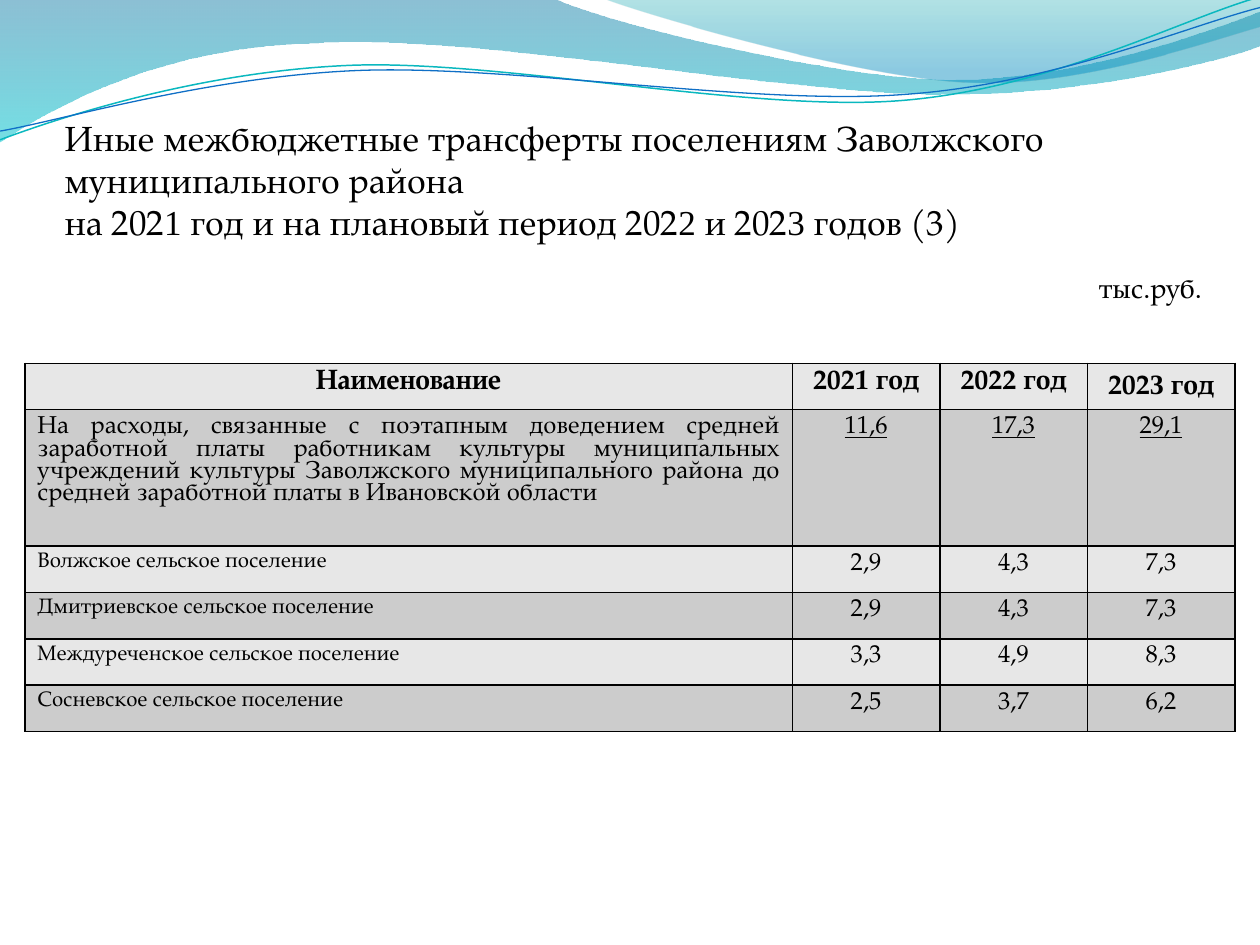
from dataclasses import dataclass
from lxml.etree import SubElement
from pptx import Presentation
from pptx.dml.color import RGBColor
from pptx.enum.text import MSO_ANCHOR, PP_ALIGN
from pptx.oxml.ns import qn
from pptx.util import Pt


@dataclass(frozen=True)
class Theme:
    """Colours, fonts and type sizes of the slide."""
    ink: str = "000000"
    light: str = "E7E7E7"
    dark: str = "CCCCCC"
    wave: tuple = ((0, "0074A1", 45), (1, "00C6CF", 55))
    crest: tuple = ((0, "00A1A9", 30), (0.8, "008BBF", 45))
    teal: str = "0AB8BF"
    blue: str = "0F6FC6"
    font: str = "TeX Gyre Pagella"
    digit_font: str = "Times New Roman"
    title: int = 20
    head: int = 16
    body: int = 14
    label: int = 12
    tight: float = 0.9


T = Theme()

WAVE = [(0, 0), (316.8, -0.7),
        (342.7, 12.2, 478.1, 45.4, 545.8, 45.4), (614.2, 45.4, 689.8, 18.7, 720, 6.5),
        (720.7, 25.9), (707.8, 31.7, 626.4, 54.7, 537.1, 54),
        (447.8, 54, 275, 20.2, 185, 24.5), (92.9, 25.9, 33.1, 59.8, -0.7, 81.4)]
CREST = [(344.9, -0.7), (366.5, 7.9, 491, 44.6, 553.7, 46.8),
         (616.3, 49.7, 691.9, 23, 720, 15.1), (720, 0)]
TEAL_LINE = [(0, 79.9), (34.6, 67, 113.8, 41, 199.4, 37.4),
             (284.4, 33.8, 427, 64.1, 513.4, 57.6), (599.8, 51.1, 675.4, 10.8, 718.6, -1.4)]
BLUE_LINE = [(0, 74.9), (33.8, 69.1, 118.1, 43.9, 203.8, 40.3),
             (290.2, 36.7, 429.8, 60.5, 516.2, 54), (601.9, 48.2, 677.5, 15.1, 720, 4.3)]

ROWS = [
    ("Наименование", "2021 год", "2022 год", "202|3| год"),
    ("На расходы, связанные с поэтапным доведением средней заработной платы работникам "
     "культуры муниципальных учреждений культуры Заволжского муниципального района до "
     "средней заработной платы в Ивановской области", "11,6", "17,3", "29,1"),
    ("Волжское сельское поселение", "2,9", "4,3", "7,3"),
    ("Дмитриевское сельское поселение", "2,9", "4,3", "7,3"),
    ("Междуреченское сельское поселение", "3,3", "4,9", "8,3"),
    ("Сосневское сельское поселение", "2,5", "3,7", "6,2"),
]


def add_curve(slide, x, y, segments, close):
    """Draw an outline of lines and cubic curves with its origin at x, y."""
    pts = [(Pt(x + seg[i]), Pt(y + seg[i + 1])) for seg in segments for i in range(0, len(seg), 2)]
    fb = slide.shapes.build_freeform(*pts[0])
    fb.add_line_segments(pts[1:], close=close)
    s = fb.convert_to_shape()
    s.shadow.inherit = False
    lines = iter(s._element.xpath(".//a:lnTo"))
    for seg in segments[1:]:
        line = next(lines)
        if len(seg) == 6:
            line.addprevious(curve := line.makeelement(qn("a:cubicBezTo")))
            for part in (line, next(lines), next(lines)):
                curve.append(part[0])
                part.getparent().remove(part)
    return s


def add_waves(slide, x, y):
    """Draw the translucent waves and the two thin lines of the header."""
    for segments, stops in ((WAVE, T.wave), (CREST, T.crest)):
        s = add_curve(slide, x, y, segments, True)
        s.line.fill.background()
        s.fill.gradient()
        s.fill.gradient_angle = 270
        for stop, (pos, color, _) in zip(s.fill.gradient_stops, stops):
            stop.position = pos
            stop.color.rgb = RGBColor.from_string(color)
        for clr, (_, _, opacity) in zip(s._element.xpath(".//a:gs/a:srgbClr"), stops):
            SubElement(clr, qn("a:alpha")).set("val", str(opacity * 1000))
    for segments, color, width in ((TEAL_LINE, T.teal, 0.85), (BLUE_LINE, T.blue, 0.75)):
        s = add_curve(slide, x, y, segments, False)
        s.fill.background()
        s.line.color.rgb = RGBColor.from_string(color)
        s.line.width = Pt(width)


def write(p, text, size, bold=False):
    """Fill a paragraph; parts between bars take the digit font."""
    p.font.size, p.font.bold = Pt(size), bold
    p.font.name = T.font
    p.font.color.rgb = RGBColor.from_string(T.ink)
    for i, part in enumerate(text.split("|")):
        for j, line in enumerate(part.split("\n")):
            if j:
                p.add_line_break()
            r = p.add_run()
            r.text = line
            if i % 2:
                r.font.name = T.digit_font


def add_text(slide, x, y, w, h, text, size):
    """Add a wrapping text box and return its frame."""
    tf = slide.shapes.add_textbox(Pt(x), Pt(y), Pt(w), Pt(h)).text_frame
    tf.word_wrap = True
    write(tf.paragraphs[0], text, size)
    return tf


def add_title(slide, x, y, w, h):
    """Place the title at the bottom of its box."""
    tf = add_text(slide, x, y, w, h,
                  "Иные межбюджетные трансферты поселениям Заволжского муниципального района \n"
                  "на 202|1| год и на плановый период 202|2| и 202|3| годов (3)", T.title)
    tf.vertical_anchor = MSO_ANCHOR.BOTTOM
    tf.margin_left = tf.margin_right = tf.margin_bottom = 0


def style_cell(cell, color):
    """Give a cell black borders and a plain fill."""
    pr = cell._tc.get_or_add_tcPr()
    for side in ("a:lnL", "a:lnR", "a:lnT", "a:lnB"):
        ln = SubElement(pr, qn(side), w=str(Pt(1)))
        SubElement(SubElement(ln, qn("a:solidFill")), qn("a:srgbClr"), val=T.ink)
    cell.fill.solid()
    cell.fill.fore_color.rgb = RGBColor.from_string(color)


def add_transfers(slide, x, y, w, h):
    """Place the table of transfers by settlement."""
    year_w, head_h, purpose_h = 84.3, 25.2, 78
    row_h = (h - head_h - purpose_h) / (len(ROWS) - 2)
    table = slide.shapes.add_table(len(ROWS), 4, Pt(x), Pt(y), Pt(w), Pt(h)).table
    for i, col in enumerate(table.columns):
        col.width = Pt(year_w if i else w - 3 * year_w)
    for i, (row, texts) in enumerate(zip(table.rows, ROWS)):
        row.height = Pt((head_h, purpose_h)[i] if i < 2 else row_h)
        for j, (cell, text) in enumerate(zip(row.cells, texts)):
            style_cell(cell, T.dark if i % 2 else T.light)
            p = cell.text_frame.paragraphs[0]
            size = T.head if i == 0 else T.label if i > 1 and j == 0 else T.body
            write(p, text, size, bold=i == 0)
            p.line_spacing = 1.0 if "|" in text else T.tight
            p.alignment = PP_ALIGN.CENTER
            if j == 0 and i:
                p.alignment = PP_ALIGN.JUSTIFY if i == 1 else PP_ALIGN.LEFT
            if i == 1 and j:
                for r in p.runs:
                    r.font.underline = True


def main():
    """Build and save the slide."""
    prs = Presentation()
    prs.slide_width, prs.slide_height = Pt(720), Pt(540)
    slide = prs.slides.add_slide(prs.slide_layouts[6])
    add_waves(slide, 0, 0)
    add_title(slide, 36.9, 48.5, 648, 90)
    add_transfers(slide, 14.2, 207.6, 691.5, 209.3)
    add_text(slide, 620.8, 151.2, 85, 26.6, "тыс.руб.", T.head)
    prs.save("out.pptx")


if __name__ == "__main__":
    main()
